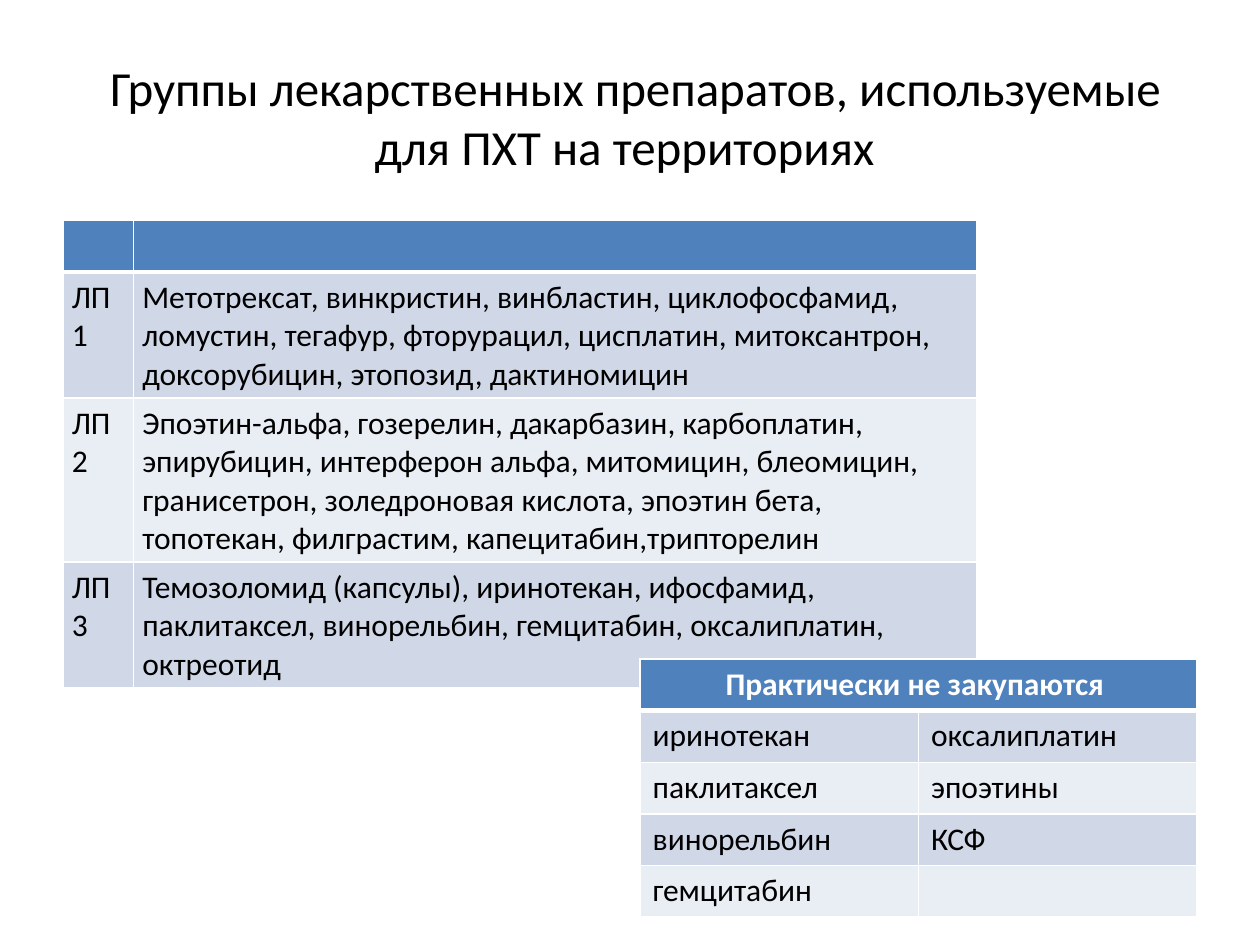
import pptx
import pptx.util
import pptx.dml.color
import pptx.enum.text
import pptx.oxml
import pptx.oxml.ns

# Content
TITLE = " Группы лекарственных препаратов, используемые для ПХТ на территориях "
GROUPS = [
    ("", ""),
    ("ЛП 1", "Метотрексат, винкристин, винбластин, циклофосфамид, ломустин, "
             "тегафур, фторурацил, цисплатин, митоксантрон, доксорубицин, "
             "этопозид, дактиномицин"),
    ("ЛП 2", "Эпоэтин-альфа, гозерелин, дакарбазин, карбоплатин, эпирубицин, "
             "интерферон альфа, митомицин, блеомицин, гранисетрон, золедроновая "
             "кислота, эпоэтин бета, топотекан, филграстим, "
             "капецитабин,трипторелин"),
    ("ЛП 3", "Темозоломид (капсулы), иринотекан, ифосфамид, паклитаксел, "
             "винорельбин, гемцитабин, оксалиплатин, октреотид"),
]
NOT_BOUGHT = [
    ("Практически не закупаются ", ""),
    ("иринотекан", "оксалиплатин"),
    ("паклитаксел", "эпоэтины"),
    ("винорельбин", "КСФ"),
    ("гемцитабин", ""),
]

THEME = {
    "font": "Calibri", "title": 28, "body": 18,
    "text": "000000", "header_text": "FFFFFF", "border": "FFFFFF",
    "header": "4F81BD", "bands": ("D0D8E8", "E9EDF4"),
}
WIDTH, HEIGHT = 10, 7.5
MARGIN = WIDTH * 0.05
ROW = 0.41

inch = pptx.util.Inches
color = pptx.dml.color.RGBColor.from_string
CENTER = pptx.enum.text.PP_ALIGN.CENTER


def style_text(para, size, tint, bold=False):
    for span in para.runs:
        span.font.name = THEME["font"]
        span.font.size = pptx.util.Pt(size)
        span.font.bold = bold
        span.font.color.rgb = color(tint)


def set_borders(cell, bottom):
    properties = cell._tc.get_or_add_tcPr()
    for index, side in enumerate("LRTB"):
        points = bottom if side == "B" else 1
        properties.insert(index, pptx.oxml.parse_xml(
            f'<a:ln{side} {pptx.oxml.ns.nsdecls("a")} w="{pptx.util.Pt(points)}">'
            f'<a:solidFill><a:srgbClr val="{THEME["border"]}"/></a:solidFill>'
            f'</a:ln{side}>'))


def add_grid(page, rows, left, top, widths, side_inset):
    frame = page.shapes.add_table(len(rows), len(widths), inch(left), inch(top),
                                  inch(sum(widths)), inch(ROW * len(rows)))
    table = frame.table
    for column, width in zip(table.columns, widths):
        column.width = inch(width)
    for r, texts in enumerate(rows):
        table.rows[r].height = inch(ROW)
        header = r == 0
        for c, text in enumerate(texts):
            cell = table.cell(r, c)
            cell.text_frame.text = text
            cell.margin_left = cell.margin_right = inch(side_inset)
            cell.fill.solid()
            cell.fill.fore_color.rgb = color(
                THEME["header"] if header else THEME["bands"][(r - 1) % 2])
            set_borders(cell, 3 if header else 1)
            style_text(cell.text_frame.paragraphs[0], THEME["body"],
                       THEME["header_text" if header else "text"], header)
    return table


deck = pptx.Presentation()
deck.slide_width, deck.slide_height = inch(WIDTH), inch(HEIGHT)
page = deck.slides.add_slide(deck.slide_layouts[6])

# Title
box = page.shapes.add_textbox(inch(MARGIN), inch(HEIGHT * 0.04),
                              inch(WIDTH - 2 * MARGIN), inch(HEIGHT / 6))
box.text_frame.word_wrap = True
box.text_frame.vertical_anchor = pptx.enum.text.MSO_ANCHOR.MIDDLE
box.text_frame.text = TITLE
heading = box.text_frame.paragraphs[0]
heading.alignment = CENTER
style_text(heading, THEME["title"], THEME["text"])

# Drug groups; rows grow with their text
add_grid(page, GROUPS, MARGIN, 1.75, (0.56, 6.69), 0.07)

# Drugs hardly purchased, aligned to the right margin
half = 2.21
shortage = add_grid(page, NOT_BOUGHT, WIDTH - MARGIN - 2 * half, 5.23,
                    (half, half), 0.1)
shortage.cell(0, 0).merge(shortage.cell(0, 1))
shortage.cell(0, 0).text_frame.paragraphs[0].alignment = CENTER

deck.save("out.pptx")
